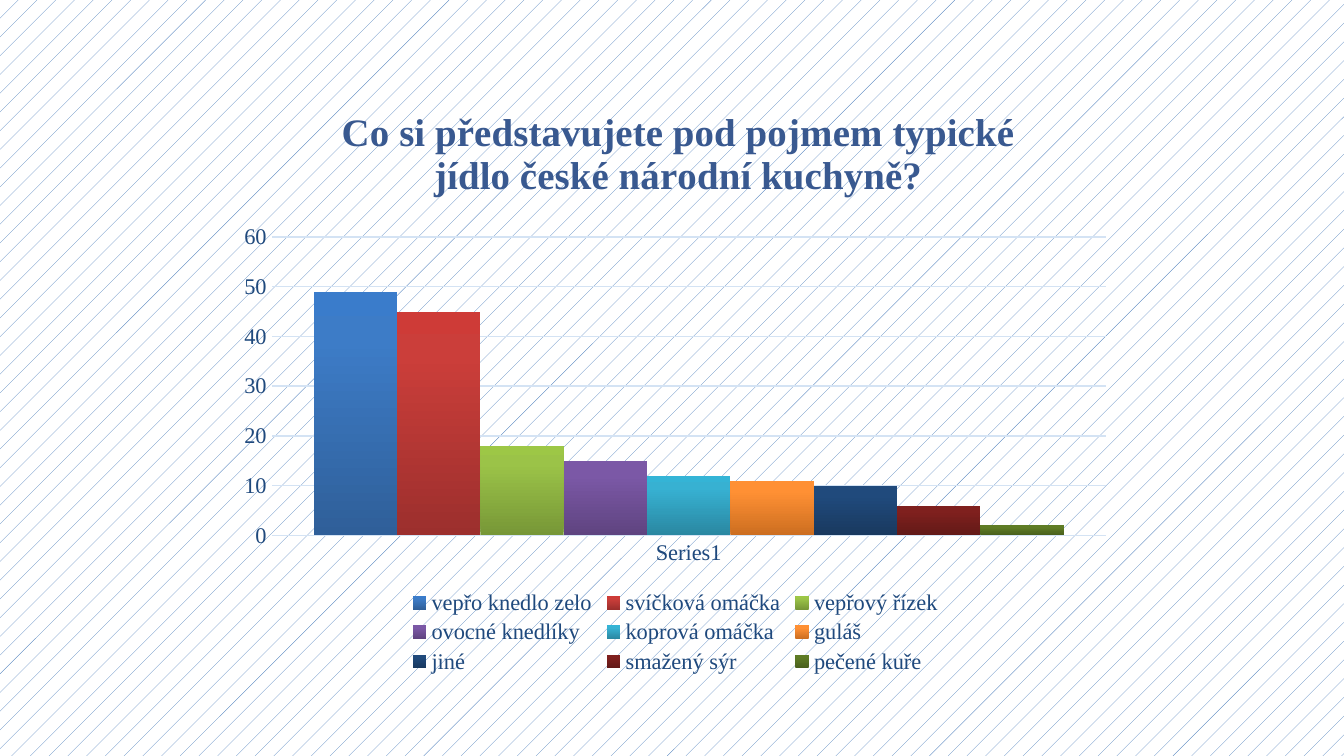
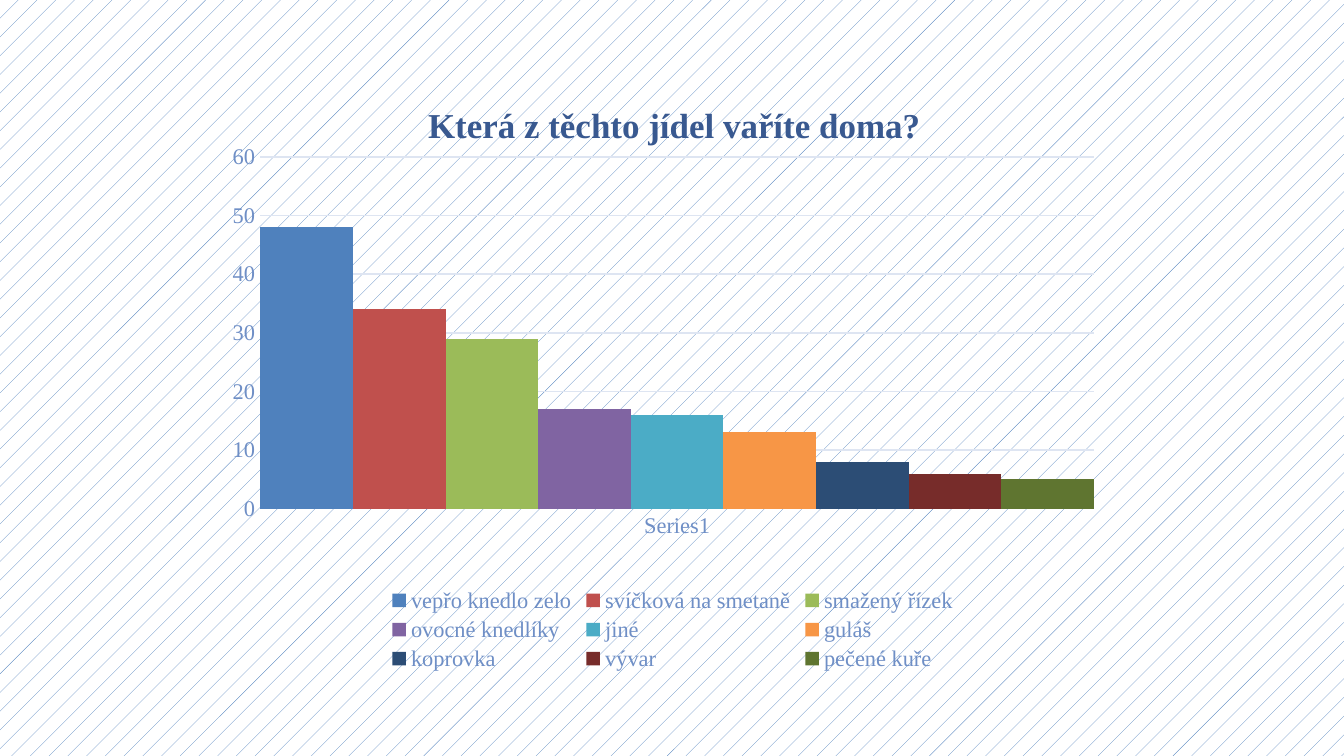
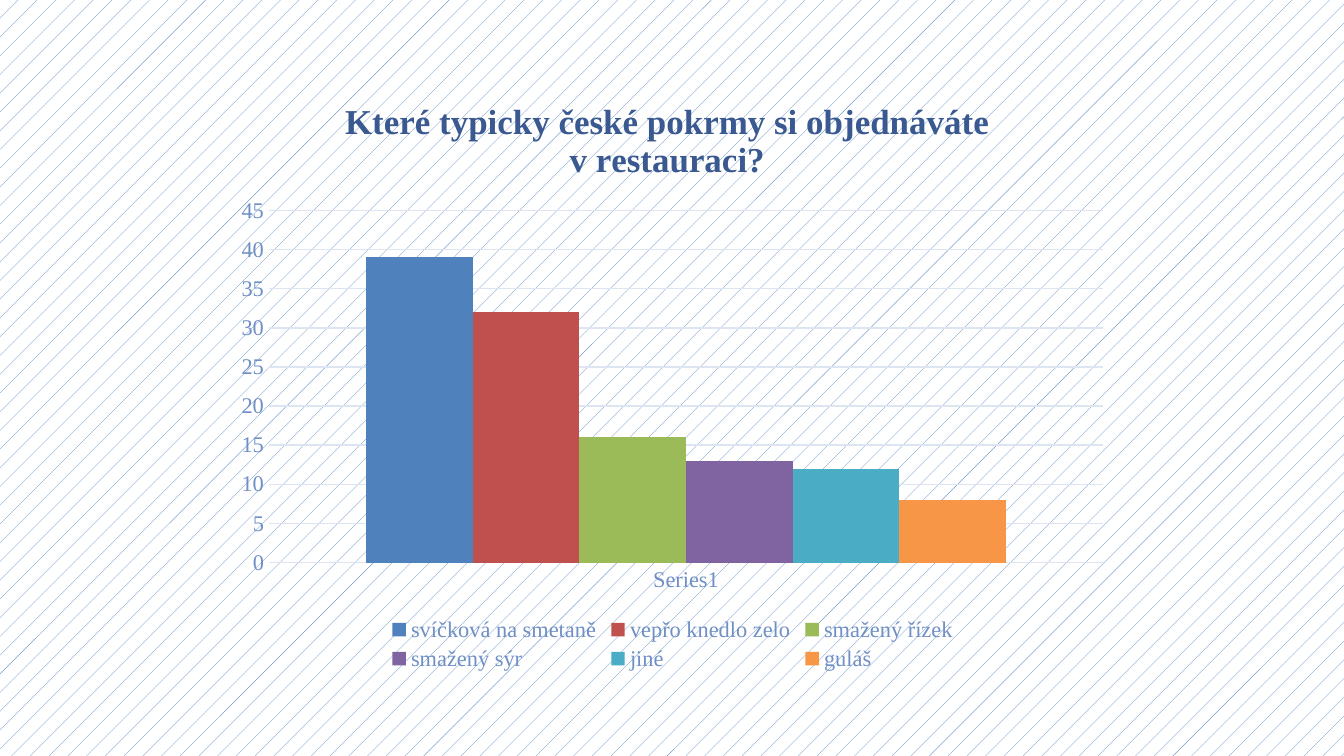
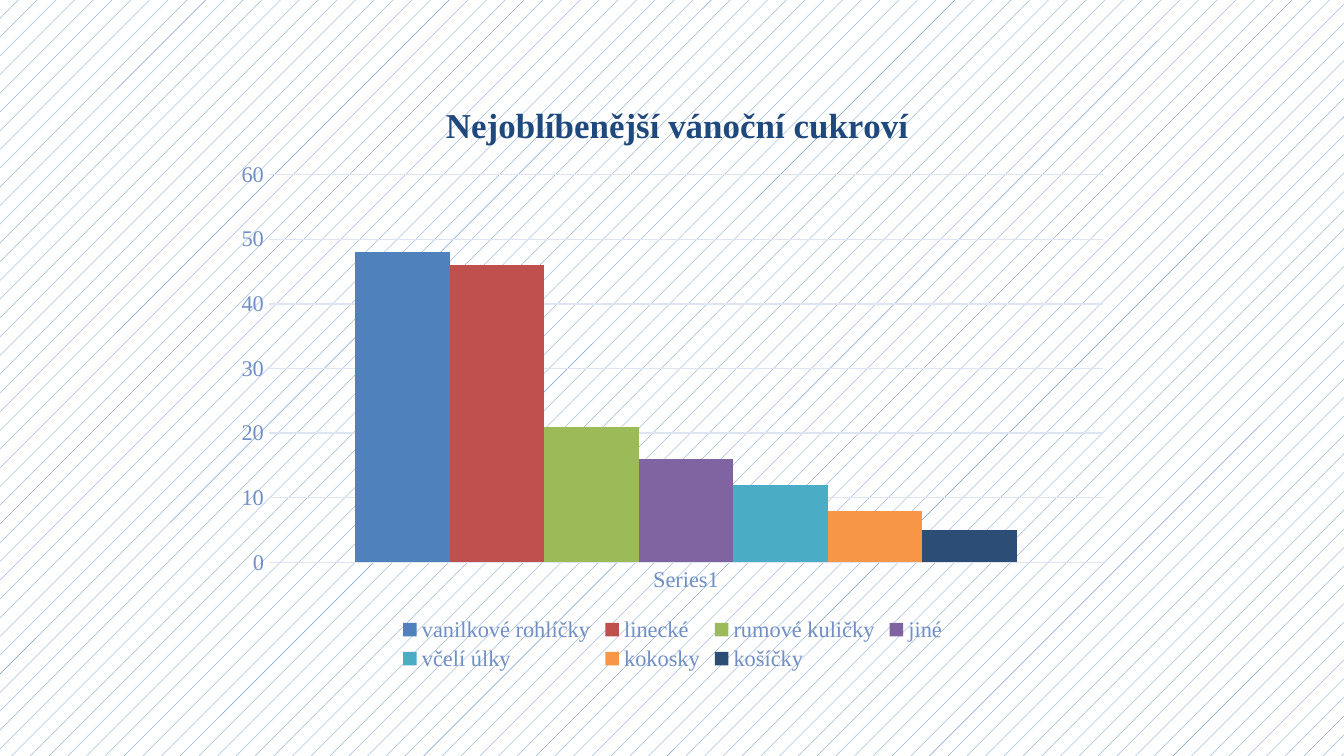
from pptx import Presentation
from pptx.chart.data import CategoryChartData
from pptx.dml.color import RGBColor
from pptx.enum.chart import XL_CHART_TYPE, XL_LEGEND_POSITION, XL_TICK_MARK
from pptx.enum.dml import MSO_PATTERN
from pptx.oxml import parse_xml
from pptx.oxml.ns import qn
from pptx.util import Inches, Pt

COLUMNS = XL_CHART_TYPE.COLUMN_CLUSTERED
BOTTOM = XL_LEGEND_POSITION.BOTTOM
NO_TICK = XL_TICK_MARK.NONE
DOTS = MSO_PATTERN.PERCENT_5

FONT = "Times New Roman"
WIDE = 10
HIGH = WIDE * 9 / 16
SIZE = (6.67, 4.44)
BLUE, NAVY, PALE = "395990", "1F497D", "6F8FC6"
PLAIN = ["4F81BD", "C0504D", "9BBB59", "8064A2", "4BACC6", "F79646",
         "2C4D75", "772C2A", "5F7530"]
# Stops at 0, 80 and 100 percent, from the foot of a column upwards
SHADED = [("2F5F99", "3D7CC7", "3A7CCB"), ("9C2F2D", "CB3E3A", "CE3B37"),
          ("779737", "9BC348", "9DC746"), ("5F4480", "7B58A6", "7C57A8"),
          ("2A88A2", "37B1D2", "34B4D6"), ("CC6E20", "FF9034", "FF9136"),
          ("19395F", "204A7C", "1E4A7E"), ("621917", "7F201E", "811F1C"),
          ("495F1C", "5F7C25", "607E23")]
STOPS = (0, 80, 100)

# "head" is the title's left and top, "plot" the inner plot's left, top,
# width and height, all as shares of the chart's size.
BASE = dict(at=(1.67, 0.59), size=18.7, ink=BLUE, text=PALE, grid="DEE5F2",
            fills=PLAIN, gap=182, top=60, step=10)
CHARTS = [
    dict(BASE, at=(1.69, 0.61), size=20.8, text=NAVY, grid="D4E3F4",
         fills=SHADED, gap=100,
         title=["Co si představujete pod pojmem typické jídlo české národní kuchyně?"],
         head=(0.12, 0.03), plot=(0.05, 0.26, 0.93, 0.5),
         data=[("vepřo knedlo zelo", 49), ("svíčková omáčka", 45),
               ("vepřový řízek", 18), ("ovocné knedlíky", 15),
               ("koprová omáčka", 12), ("guláš", 11), ("jiné", 10),
               ("smažený sýr", 6), ("pečené kuře", 2)]),
    dict(BASE, gap=0, title=["Která z těchto jídel vaříte doma?"],
         head=(0.22, 0.03), plot=(0.04, 0.13, 0.93, 0.59),
         data=[("vepřo knedlo zelo", 48), ("svíčková na smetaně", 34),
               ("smažený řízek", 29), ("ovocné knedlíky", 17), ("jiné", 16),
               ("guláš", 13), ("koprovka", 8), ("vývar", 6),
               ("pečené kuře", 5)]),
    dict(BASE, top=45, step=5,
         title=["Které typicky české pokrmy si objednáváte", "v restauraci?"],
         head=(0.13, 0.03), plot=(0.05, 0.22, 0.93, 0.59),
         data=[("svíčková na smetaně", 39), ("vepřo knedlo zelo", 32),
               ("smažený řízek", 16), ("smažený sýr", 13), ("jiné", 12),
               ("guláš", 8)]),
    dict(BASE, ink=NAVY, title=["Nejoblíbenější vánoční cukroví"],
         head=(0.24, 0.03), plot=(0.05, 0.16, 0.93, 0.65),
         data=[("vanilkové rohlíčky", 48), ("linecké", 46),
               ("rumové kuličky", 21), ("jiné", 16), ("včelí úlky", 12),
               ("kokosky", 8), ("košíčky", 5)]),
]


def rgb(code):
    return RGBColor.from_string(code)


def style(font, size, color, bold=False):
    font.name, font.size, font.bold = FONT, Pt(size), bold
    font.color.rgb = rgb(color)


def write(frame, lines, **look):
    """Put one paragraph per line in the frame, formatted by look."""
    for num, line in enumerate(lines):
        para = frame.add_paragraph() if num else frame.paragraphs[0]
        run = para.add_run()
        run.text = line
        style(run.font, **look)


def place(part, spot, index, inner=False):
    """Give a chart part a manual layout, as its child number index."""
    for old in part.findall(qn("c:layout")):
        part.remove(old)
    keys = ["xMode", "yMode"] + ["x", "y", "w", "h"][:len(spot)]
    vals = ["edge", "edge", *spot]
    if inner:
        keys, vals = ["layoutTarget"] + keys, ["inner"] + vals
    body = "".join(f'<c:{k} val="{v}"/>' for k, v in zip(keys, vals))
    part.insert(index, parse_xml(
        '<c:layout xmlns:c="http://schemas.openxmlformats.org/drawingml/2006/chart">'
        f"<c:manualLayout>{body}</c:manualLayout></c:layout>"))


def paint(form, fill):
    """Fill a series with one colour, or with a gradient of three."""
    if isinstance(fill, str):
        form.fill.solid()
        form.fill.fore_color.rgb = rgb(fill)
        return
    stops = "".join(f'<a:gs pos="{pos * 1000}"><a:srgbClr val="{code}"/></a:gs>'
                    for pos, code in zip(STOPS, fill))
    form.fill.gradient()
    props = form.fill._xPr
    old = props.find(qn("a:gradFill"))
    props.replace(old, parse_xml(
        '<a:gradFill xmlns:a="http://schemas.openxmlformats.org/drawingml/2006/main"'
        f' rotWithShape="1"><a:gsLst>{stops}</a:gsLst>'
        '<a:lin ang="16200000" scaled="0"/></a:gradFill>'))


def rule(line, color):
    line.width = Pt(0.75)
    line.color.rgb = rgb(color)


def draw(slide, item):
    data = CategoryChartData()
    data.categories = ["Series1"]
    for name, val in item["data"]:
        data.add_series(name, [val])
    box = [Inches(v) for v in item["at"] + SIZE]
    chart = slide.shapes.add_chart(COLUMNS, *box, data).chart
    style(chart.font, 10, BLUE)

    chart.has_title = True
    title = chart.chart_title
    write(title.text_frame, item["title"], size=item["size"],
          color=item["ink"], bold=True)
    title.include_in_layout = False
    place(title._element, item["head"], 1)

    chart.has_legend = True
    chart.legend.position = BOTTOM
    chart.legend.include_in_layout = False
    cat, val = chart.category_axis, chart.value_axis
    for font in (chart.legend.font, cat.tick_labels.font, val.tick_labels.font):
        style(font, 12, item["text"])
    for axis in (cat, val):
        axis.major_tick_mark = axis.minor_tick_mark = NO_TICK
    rule(cat.format.line, item["grid"])
    val.format.line.fill.background()
    val.has_major_gridlines = True
    rule(val.major_gridlines.format.line, item["grid"])
    val.minimum_scale, val.maximum_scale = 0, item["top"]
    val.major_unit = item["step"]

    plot = chart.plots[0]
    plot.gap_width, plot.overlap, plot.vary_by_categories = item["gap"], 0, False
    for series, fill in zip(plot.series, item["fills"]):
        paint(series.format, fill)
    place(chart._chartSpace.chart.plotArea, item["plot"], 0, inner=True)


def main():
    deck = Presentation()
    deck.slide_width, deck.slide_height = Inches(WIDE), Inches(HIGH)
    blank = deck.slide_layouts[6]
    for item in CHARTS:
        slide = deck.slides.add_slide(blank)
        back = slide.background.fill
        back.patterned()
        back.pattern = DOTS
        back.fore_color.rgb, back.back_color.rgb = rgb("4F81BD"), rgb("FFFFFF")
        draw(slide, item)
    deck.save("out.pptx")


if __name__ == "__main__":
    main()
